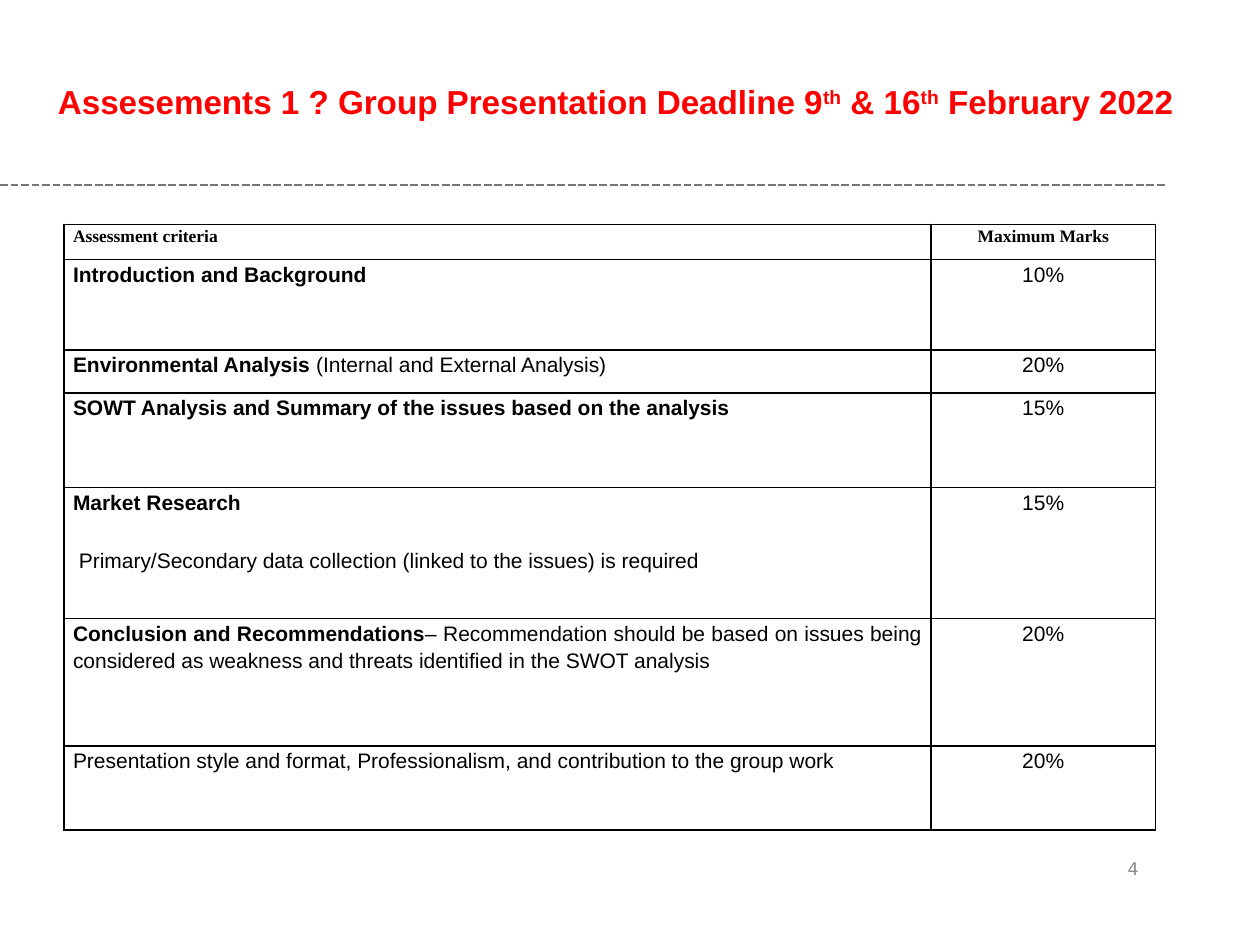
"""Build the assessment criteria slide with its marks table."""
from dataclasses import dataclass

from lxml import etree
from pptx import Presentation
from pptx.dml.color import RGBColor
from pptx.enum.dml import MSO_LINE
from pptx.enum.shapes import MSO_CONNECTOR
from pptx.enum.text import MSO_ANCHOR, PP_ALIGN
from pptx.oxml.ns import qn
from pptx.util import Inches, Pt

LEFT, CENTER, JUSTIFY = PP_ALIGN.LEFT, PP_ALIGN.CENTER, PP_ALIGN.JUSTIFY
MIDDLE, TOP = MSO_ANCHOR.MIDDLE, MSO_ANCHOR.TOP
STRAIGHT, DASH = MSO_CONNECTOR.STRAIGHT, MSO_LINE.SQUARE_DOT
WIDTH, HEIGHT = 10, 7.5


@dataclass(frozen=True)
class Theme:
    """Colours, fonts and sizes of the slide."""
    title: str = "FF0000"
    ink: str = "000000"
    rule: str = "747678"
    muted: str = "8C8C8C"
    sans: str = "Arial"
    serif: str = "Times New Roman"
    number: str = "DejaVu Sans"
    title_size: int = 19
    body_size: int = 12
    small_size: int = 10


class Deck:
    """Hold the theme and the current slide; places are shares of its size."""

    def __init__(self, theme):
        self.theme = theme
        self.prs = Presentation()
        self.prs.slide_width, self.prs.slide_height = Inches(WIDTH), Inches(HEIGHT)
        self.s = self.prs.slides.add_slide(self.prs.slide_layouts[6])

    def box(self, x, y, w, h):
        """Turn shares of the slide into lengths."""
        return [Inches(round(share * side, 2))
                for share, side in ((x, WIDTH), (y, HEIGHT), (w, WIDTH), (h, HEIGHT))]

    def run(self, p, text, font, size, color, bold=False, base=0):
        """Add one run, raised by base per cent."""
        r = p.add_run()
        r.text = text
        r.font.name, r.font.size, r.font.bold = font, Pt(size), bold
        r.font.color.rgb = RGBColor.from_string(color)
        if base:
            r.font._element.set("baseline", str(base * 1000))

    def text(self, place, runs, font, size, color, bold=False):
        """Add a centred text box of (text, base) runs."""
        tf = self.s.shapes.add_textbox(*self.box(*place)).text_frame
        tf.word_wrap, tf.vertical_anchor = True, MIDDLE
        tf.margin_left = tf.margin_right = tf.margin_top = tf.margin_bottom = 0
        p = tf.paragraphs[0]
        p.alignment = CENTER
        for text, base in runs:
            self.run(p, text, font, size, color, bold, base)

    def rule(self, y, w):
        """Add a dashed horizontal line from the left edge."""
        x1, y1, x2, _ = self.box(0, y, w, 0)
        sp = self.s.shapes.add_connector(STRAIGHT, x1, y1, x2, y1)
        sp.line.color.rgb = RGBColor.from_string(self.theme.rule)
        sp.line.width, sp.line.dash_style = Pt(1.5), DASH
        etree.SubElement(sp._element.spPr, qn("a:effectLst"))

    def cell(self, cell, paragraphs, align, header):
        """Fill a cell with paragraphs of (text, bold) runs and frame it."""
        t = self.theme
        cell.margin_left = cell.margin_right = Inches(0.07)
        cell.margin_top = cell.margin_bottom = 0
        cell.vertical_anchor = TOP
        tf = cell.text_frame
        for i, runs in enumerate(paragraphs):
            p = tf.add_paragraph() if i else tf.paragraphs[0]
            p.alignment, p.line_spacing = align, 1.15
            p.space_before, p.space_after = Pt(6), Pt(6 if header else 12)
            for text, bold in runs:
                self.run(p, text, t.serif if header else t.sans,
                         t.small_size if header else t.body_size, t.ink, bold)
        tcPr = cell._tc.get_or_add_tcPr()
        for side in ("a:lnL", "a:lnR", "a:lnT", "a:lnB"):
            ln = etree.SubElement(tcPr, qn(side), w=str(Pt(1)))
            fill = etree.SubElement(ln, qn("a:solidFill"))
            etree.SubElement(fill, qn("a:srgbClr"), val=t.ink)
        cell.fill.background()

    def table(self, place, widths, rows):
        """Add a table of (height, alignment, criterion, marks) rows."""
        table = self.s.shapes.add_table(len(rows), len(widths), *self.box(*place)).table
        table.horz_banding = False
        for col, width in zip(table.columns, widths):
            col.width = Inches(width)
        for i, (height, align, criterion, marks) in enumerate(rows):
            table.rows[i].height = Inches(height)
            header = i == 0
            self.cell(table.cell(i, 0), criterion, align, header)
            self.cell(table.cell(i, 1), [[(marks, header)]], CENTER, header)


ROWS = [
    (0.28, LEFT, [[("Assessment criteria", True)]], "Maximum Marks"),
    (0.72, JUSTIFY, [[("Introduction and Background", True)]], "10%"),
    (0.34, JUSTIFY, [[("Environmental Analysis", True),
                      (" (Internal and External Analysis)", False)]], "20%"),
    (0.75, LEFT, [[("SOWT Analysis and Summary of the issues based on the analysis", True)]], "15%"),
    (1.04, LEFT, [[("Market Research", True)],
                  [(" Primary/Secondary data collection (linked to the issues) is required", False)]],
     "15%"),
    (1.01, JUSTIFY, [[("Conclusion and Recommendations", True),
                      ("– Recommendation should be based on issues being considered as weakness "
                       "and threats identified in the SWOT analysis", False)]], "20%"),
    (0.67, LEFT, [[("Presentation style and format, Professionalism, and contribution "
                    "to the group work", False)]], "20%"),
]
TITLE = [("Assesements 1 ? Group Presentation Deadline 9", 0), ("th", 30),
         (" & 16", 0), ("th", 30), (" February 2022", 0)]


def main():
    """Build and save the slide."""
    t = Theme()
    deck = Deck(t)
    deck.rule(0.196, 0.925)
    deck.table((0.051, 0.237, 0.866, 0.64), (6.88, 1.78), ROWS)
    deck.text((0.035, 0.07, 0.907, 0.073), TITLE, t.sans, t.title_size, t.title, True)
    deck.text((0.878, 0.89, 0.043, 0.06), [("4", 0)], t.number, t.small_size, t.muted)
    deck.prs.save("out.pptx")


if __name__ == "__main__":
    main()
